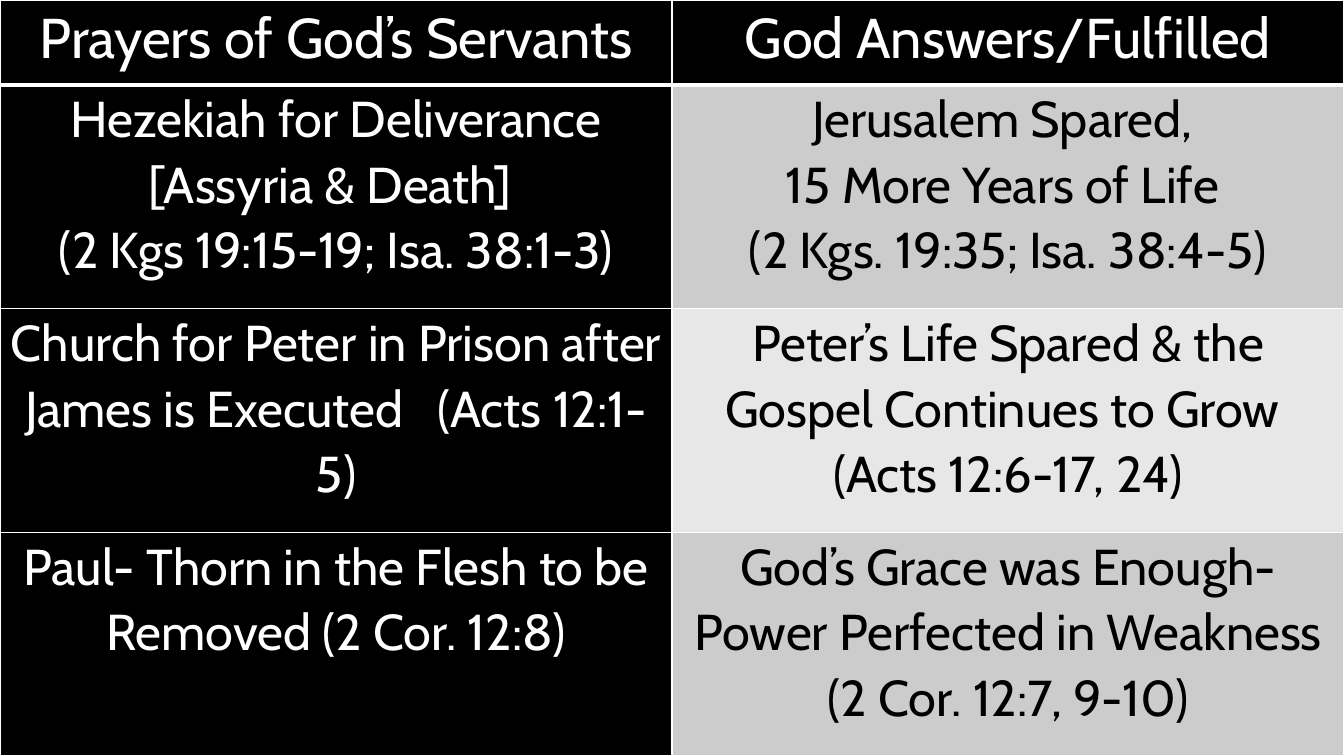
from dataclasses import dataclass

from lxml import etree
from pptx import Presentation
from pptx.dml.color import RGBColor
from pptx.enum.text import PP_ALIGN
from pptx.oxml.ns import qn
from pptx.util import Inches, Pt

HEADER = ("Prayers of God’s Servants", "God Answers/Fulfilled")
# Each prayer and its answer; a line break starts a new paragraph.
PRAYERS = [
    ("Hezekiah for Deliverance [Assyria & Death] \n(2 Kgs 19:15-19; Isa. 38:1-3)",
     "Jerusalem Spared, \n15 More Years of Life \n(2 Kgs. 19:35; Isa. 38:4-5)"),
    ("Church for Peter in Prison after James is Executed   (Acts 12:1-5)",
     "Peter’s Life Spared & the Gospel Continues to Grow \n(Acts 12:6-17, 24)"),
    ("Paul- Thorn in the Flesh to be Removed (2 Cor. 12:8)",
     "God’s Grace was Enough- Power Perfected in Weakness (2 Cor. 12:7, 9-10)"),
]


@dataclass(frozen=True)
class Theme:
    font: str = "Cabin"
    header_size: int = 40
    body_size: int = 36
    line_spacing: float = 1.07
    dark: str = "000000"
    light: str = "FFFFFF"
    bands: tuple = ("CCCCCC", "E7E7E7")
    rule: int = 1
    header_rule: int = 3


THEME = Theme()
SLIDE_W, SLIDE_H = Inches(13.33), Inches(7.5)
HEADER_H = Inches(0.84)
SIDE_MARGIN = Inches(0.07)


def set_borders(cell, top, bottom):
    """Rule all four sides; top and bottom are widths in points."""
    tc_pr = cell._tc.get_or_add_tcPr()
    sides = {"L": THEME.rule, "R": THEME.rule, "T": top, "B": bottom}
    for i, (side, width) in enumerate(sides.items()):
        ln = etree.Element(qn(f"a:ln{side}"), w=str(Pt(width)))
        fill = etree.SubElement(ln, qn("a:solidFill"))
        etree.SubElement(fill, qn("a:srgbClr"), val=THEME.light)
        tc_pr.insert(i, ln)


def fill_cell(cell, text, size, fill, color):
    cell.margin_left = cell.margin_right = SIDE_MARGIN
    cell.margin_top = cell.margin_bottom = 0
    cell.fill.solid()
    cell.fill.fore_color.rgb = RGBColor.from_string(fill)
    tf = cell.text_frame
    tf.text = text
    for p in tf.paragraphs:
        p.alignment = PP_ALIGN.CENTER
        p.line_spacing = THEME.line_spacing
        for r in p.runs:
            r.font.name = THEME.font
            r.font.size = Pt(size)
            r.font.bold = False
            r.font.color.rgb = RGBColor.from_string(color)


def main():
    prs = Presentation()
    prs.slide_width, prs.slide_height = SLIDE_W, SLIDE_H
    slide = prs.slides.add_slide(prs.slide_layouts[6])

    rows = [HEADER, *PRAYERS]
    table = slide.shapes.add_table(len(rows), len(HEADER), 0, 0, SLIDE_W, SLIDE_H).table
    for column in table.columns:
        column.width = SLIDE_W // len(HEADER)
    for i, row in enumerate(table.rows):
        row.height = HEADER_H if i == 0 else (SLIDE_H - HEADER_H) // len(PRAYERS)

    for i, texts in enumerate(rows):
        size = THEME.body_size if i else THEME.header_size
        top = THEME.header_rule if i == 1 else THEME.rule
        bottom = THEME.rule if i else THEME.header_rule
        for j, text in enumerate(texts):
            cell = table.cell(i, j)
            if i and j:
                fill, color = THEME.bands[(i - 1) % len(THEME.bands)], THEME.dark
            else:
                fill, color = THEME.dark, THEME.light
            fill_cell(cell, text, size, fill, color)
            set_borders(cell, top, bottom)

    prs.save("out.pptx")


if __name__ == "__main__":
    main()
